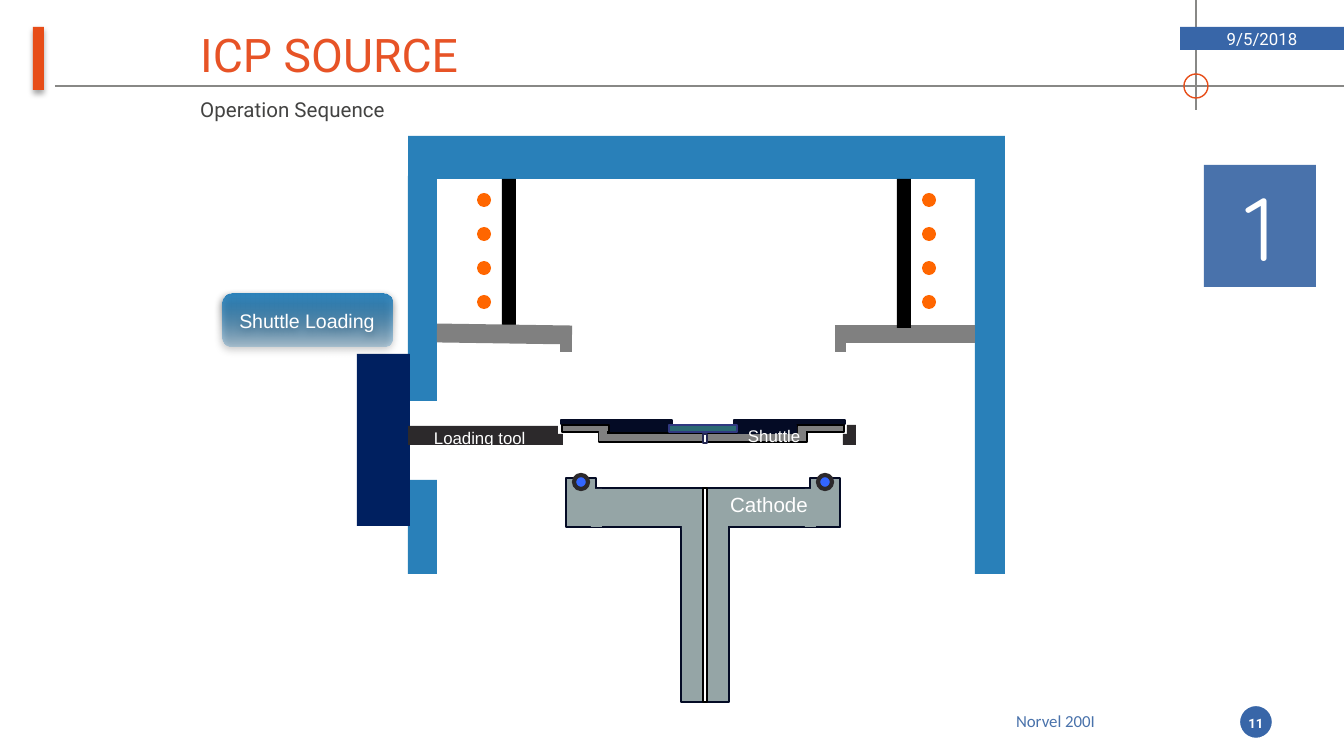
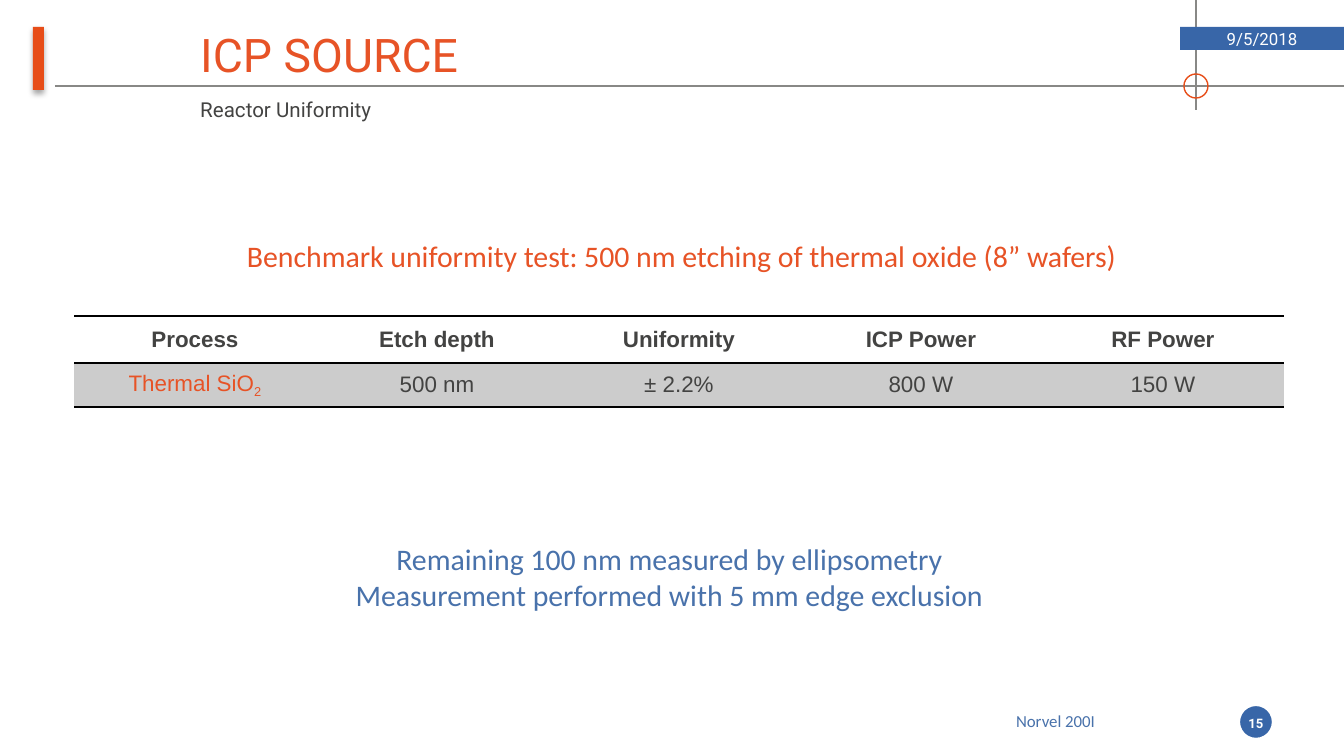
import pptx
import pptx.dml.color
import pptx.enum.shapes
import pptx.enum.text
import pptx.oxml
import pptx.oxml.ns
import pptx.util
from lxml import etree

RGB = pptx.dml.color.RGBColor
SHAPE = pptx.enum.shapes.MSO_SHAPE
ALIGN = pptx.enum.text.PP_ALIGN
ANCHOR = pptx.enum.text.MSO_ANCHOR
qn = pptx.oxml.ns.qn

PX = 914400 / 134.4

ORANGE = RGB(0xE7, 0x4D, 0x18)
TITLE_ORANGE = RGB(0xE7, 0x53, 0x26)
BAND_BLUE = RGB(0x38, 0x66, 0xA8)
SOFT_BLUE = RGB(0x49, 0x72, 0xAB)
RULE_GRAY = RGB(0x88, 0x88, 0x86)
TEXT_GRAY = RGB(0x43, 0x43, 0x42)
WHITE = RGB(0xFF, 0xFF, 0xFF)
BLACK = RGB(0x00, 0x00, 0x00)
WALL_BLUE = RGB(0x29, 0x80, 0xB9)
GATE_NAVY = RGB(0x00, 0x20, 0x60)
COIL_ORANGE = RGB(0xFF, 0x66, 0x00)
METAL = RGB(0x80, 0x80, 0x80)
TOOL_DARK = RGB(0x2C, 0x29, 0x2B)
PLATE_DARK = RGB(0x04, 0x0B, 0x25)
WAFER_TEAL = RGB(0x2B, 0x69, 0x73)
WAFER_EDGE = RGB(0x30, 0x38, 0x80)
HOLE_EDGE = RGB(0x24, 0x28, 0x52)
CATHODE_GRAY = RGB(0x95, 0xA5, 0xA6)
SEAL_BLUE = RGB(0x33, 0x66, 0xFF)
ROW_GRAY = RGB(0xCC, 0xCC, 0xCC)

NO_GRID_STYLE = "{2D5ABB26-0587-4C30-8999-92F81FD0307C}"


def px(value):
    return pptx.util.Emu(round(value * PX))


def shape(slide, place, fill=None, line=None, width=1, kind=SHAPE.RECTANGLE):
    item = slide.shapes.add_shape(kind, *map(px, place))
    item.shadow.inherit = False
    if fill is None:
        item.fill.background()
    else:
        item.fill.solid()
        item.fill.fore_color.rgb = fill
    if line is None:
        item.line.fill.background()
    else:
        item.line.color.rgb = line
        item.line.width = pptx.util.Pt(width)
    return item


def line(slide, start, end, color, width):
    rule = slide.shapes.add_connector(
        pptx.enum.shapes.MSO_CONNECTOR.STRAIGHT, *map(px, start + end))
    rule.line.color.rgb = color
    rule.line.width = pptx.util.Pt(width)
    etree.SubElement(rule._element.spPr, qn("a:effectLst"))


def cast_shadow(item, alpha, blur, distance):
    effects = item._element.spPr.find(qn("a:effectLst"))
    shadow = etree.SubElement(
        effects, qn("a:outerShdw"), blurRad=str(pptx.util.Pt(blur)),
        dist=str(pptx.util.Pt(distance)), dir="5400000", rotWithShape="0")
    color = etree.SubElement(shadow, qn("a:srgbClr"), val="000000")
    etree.SubElement(color, qn("a:alpha"), val=str(alpha * 1000))


def style(paragraph, size, font, color, align=ALIGN.CENTER, bold=False):
    paragraph.alignment = align
    paragraph.font.size = pptx.util.Pt(size)
    paragraph.font.name = font
    paragraph.font.color.rgb = color
    paragraph.font.bold = bold


def write(item, text, size, font, color, align=ALIGN.CENTER, bold=False,
          anchor=ANCHOR.MIDDLE, wrap=True):
    frame = item.text_frame
    frame.word_wrap = wrap
    frame.vertical_anchor = anchor
    frame.text = text
    for paragraph in frame.paragraphs:
        style(paragraph, size, font, color, align, bold)
    return frame


def text_box(slide, place, *args, **options):
    return write(slide.shapes.add_textbox(*map(px, place)), *args, **options)


def part_label(slide, place, text):
    frame = text_box(slide, place, text, 9, "Arial", WHITE, ALIGN.LEFT,
                     anchor=ANCHOR.TOP, wrap=False)
    frame.margin_left = frame.margin_right = 0
    frame.margin_top = frame.margin_bottom = 0


def base_slide(deck, subtitle, number):
    slide = deck.slides.add_slide(deck.slide_layouts[6])
    line(slide, (55, 86), (1344, 86), RULE_GRAY, 0.75)
    line(slide, (1196, 110), (1196, 0), RULE_GRAY, 0.75)
    shape(slide, (1184, 74, 24, 24), None, ORANGE, 0.75, SHAPE.OVAL)
    accent = shape(slide, (33, 27, 11, 63), ORANGE)
    cast_shadow(accent, 35, 3.1, 1.8)
    shape(slide, (1238, 704, 36, 36), BAND_BLUE, WHITE, 2.25, SHAPE.OVAL)
    text_box(slide, (187, 19, 993, 70), "ICP SOURCE", 24.8, "Roboto",
             TITLE_ORANGE, ALIGN.LEFT)
    date_band = shape(slide, (1180, 27, 164, 23), BAND_BLUE)
    write(date_band, "9/5/2018", 9, "Roboto", WHITE)
    footer = shape(slide, (915, 704, 281, 34), WHITE)
    write(footer, "Norvel 200I", 9, "Calibri", SOFT_BLUE)
    text_box(slide, (1234, 704, 44, 38), number, 7, "Roboto", WHITE, bold=True)
    text_box(slide, (187, 90, 371, 38), subtitle, 11, "Roboto", TEXT_GRAY,
             ALIGN.LEFT, anchor=ANCHOR.TOP)
    return slide


def draw_chamber(slide):
    for wall in ((408, 136, 597, 43), (975, 176, 30, 398),
                 (408, 480, 29, 94), (408, 176, 29, 225)):
        shape(slide, wall, WALL_BLUE)
    shape(slide, (357, 354, 53, 172), GATE_NAVY)
    for coil_x in (477, 922):
        for turn in range(4):
            shape(slide, (coil_x, 193 + 34 * turn, 14, 14), COIL_ORANGE,
                  kind=SHAPE.FLOWCHART_CONNECTOR)
    shape(slide, (502, 179, 14, 149), BLACK)
    line(slide, (835, 334), (975, 334), METAL, 10.13)
    line(slide, (835, 343), (846, 343), METAL, 10.13)
    shape(slide, (897, 179, 14, 149), BLACK)
    line(slide, (437, 333), (572, 335), METAL, 10.13)
    line(slide, (560, 343), (572, 343), METAL, 10.13)


def draw_shuttle(slide):
    for tool in ((408, 434, 155, 11), (408, 426, 150, 10),
                 (847, 425, 9, 11), (843, 434, 13, 11)):
        shape(slide, tool, TOOL_DARK)
    part_label(slide, (434, 428, 93, 20), "Loading tool")
    for plate in ((734, 420, 111, 4), (561, 420, 111, 4), (610, 425, 58, 8)):
        shape(slide, plate, PLATE_DARK, PLATE_DARK, 0.75)
    for carrier in ((599, 433, 208, 9), (562, 425, 47, 7), (797, 425, 47, 7)):
        shape(slide, carrier, METAL, BLACK)
    for joint_x in (599, 798):
        shape(slide, (joint_x, 427, 8, 14), METAL)
    shape(slide, (738, 425, 58, 8), PLATE_DARK, PLATE_DARK, 0.75)
    shape(slide, (669, 425, 68, 7), WAFER_TEAL, WAFER_EDGE, 0.75)
    part_label(slide, (748, 426, 54, 20), "Shuttle")
    shape(slide, (703, 434, 4, 9), WHITE, HOLE_EDGE)


def draw_cathode(slide):
    for block in ((567, 488, 273, 39), (681, 527, 48, 175),
                  (810, 478, 30, 49), (566, 478, 30, 49)):
        shape(slide, block, CATHODE_GRAY, PLATE_DARK)
    for joint in ((591, 489, 11, 38), (805, 489, 11, 38)):
        shape(slide, joint, CATHODE_GRAY)
    text_box(slide, (716, 485, 106, 39), "Cathode", 11, "Arial", WHITE,
             wrap=False)
    shape(slide, (682, 523, 46, 7), CATHODE_GRAY)
    shape(slide, (703, 488, 4, 214), WHITE, BLACK)
    for seal_x in (574, 818):
        shape(slide, (seal_x, 475, 14, 14), SEAL_BLUE, TOOL_DARK, 2.25,
              SHAPE.OVAL)


def draw_step(slide):
    step_name = shape(slide, (222, 294, 170, 53), WALL_BLUE,
                      kind=SHAPE.ROUNDED_RECTANGLE)
    step_name.fill.gradient()
    step_name.fill.gradient_angle = 270
    for stop in step_name.fill.gradient_stops:
        stop.color.rgb = WALL_BLUE
    faded = list(step_name._element.spPr.iter(qn("a:srgbClr")))[-1]
    etree.SubElement(faded, qn("a:alpha"), val="25000")
    cast_shadow(step_name, 63, 4.5, 1.5)
    write(step_name, "Shuttle Loading", 10.5, "Arial", WHITE)
    step_number = shape(slide, (1204, 165, 112, 122), SOFT_BLUE)
    write(step_number, "1", 48, "Quicksand", WHITE, anchor=ANCHOR.TOP)


def rule_cell(cell, sides):
    properties = cell._tc.get_or_add_tcPr()
    for index, side in enumerate(sides):
        border = pptx.oxml.parse_xml(
            f'<a:{side} {pptx.oxml.ns.nsdecls("a")} w="12700"><a:solidFill>'
            f'<a:srgbClr val="{BLACK}"/></a:solidFill></a:{side}>')
        properties.insert(index, border)


def draw_results(slide):
    rows = (("Process", "Etch depth", "Uniformity", "ICP Power", "RF Power"),
            ("Thermal SiO", "500 nm", "± 2.2%", "800 W", "150 W"))
    results = slide.shapes.add_table(
        2, 5, *map(px, (74, 316, 1210, 91))).table
    results._tbl.tblPr.find(qn("a:tableStyleId")).text = NO_GRID_STYLE
    results.horz_banding = False
    for row, height in zip(results.rows, (47, 44)):
        row.height = px(height)
    for r, texts in enumerate(rows):
        for c, text in enumerate(texts):
            cell = results.cell(r, c)
            cell.text = text
            cell.vertical_anchor = ANCHOR.MIDDLE
            color = TITLE_ORANGE if (r, c) == (1, 0) else TEXT_GRAY
            style(cell.text_frame.paragraphs[0], 12, "Arial", color,
                  bold=r == 0)
            if r == 0:
                cell.fill.background()
            else:
                cell.fill.solid()
                cell.fill.fore_color.rgb = ROW_GRAY
            rule_cell(cell, ("lnT", "lnB"))
    subscript = results.cell(1, 0).text_frame.paragraphs[0].add_run()
    subscript.text = "2"
    subscript.font._element.set("baseline", "-25000")


def main():
    """Build the two process slides and save the deck."""
    deck = pptx.Presentation()
    deck.slide_width, deck.slide_height = px(1344), px(756)

    sequence = base_slide(deck, "Operation Sequence", "11")
    draw_chamber(sequence)
    draw_shuttle(sequence)
    draw_cathode(sequence)
    draw_step(sequence)

    uniformity = base_slide(deck, "Reactor Uniformity", "15")
    text_box(uniformity, (32, 231, 1300, 50),
             "Benchmark uniformity test: 500 nm etching of thermal oxide "
             "(8” wafers)", 16, "Calibri", TITLE_ORANGE, anchor=ANCHOR.TOP)
    text_box(uniformity, (165, 534, 1009, 86),
             "Remaining 100 nm measured by ellipsometry\n"
             "Measurement performed with 5 mm edge exclusion",
             16, "Calibri", SOFT_BLUE, anchor=ANCHOR.TOP)
    draw_results(uniformity)
    deck.save("out.pptx")


if __name__ == "__main__":
    main()
